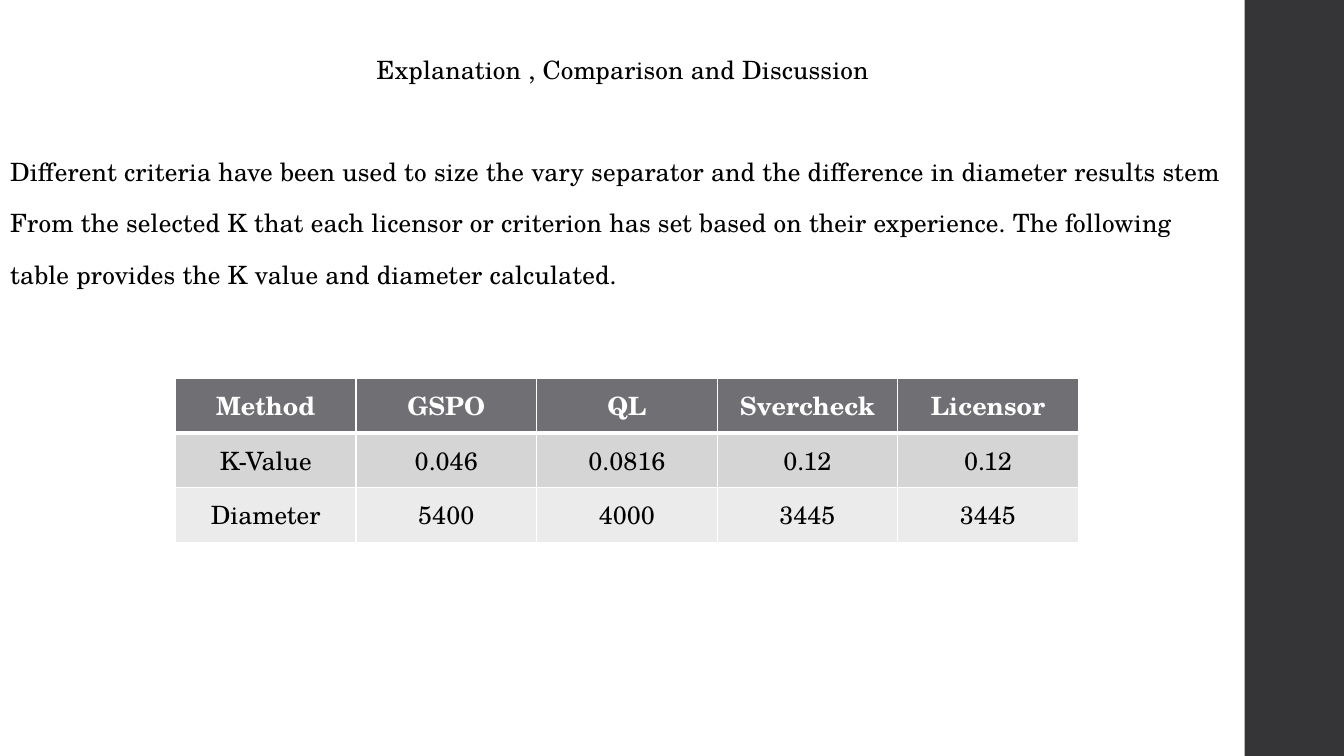
import dataclasses

import lxml.etree
import pptx
import pptx.dml.color
import pptx.enum.shapes
import pptx.enum.text
import pptx.oxml.ns
import pptx.util

Pt = pptx.util.Pt
Align = pptx.enum.text.PP_ALIGN
Anchor = pptx.enum.text.MSO_ANCHOR
FACE = "TeX Gyre Schola"
WIDTH, HEIGHT = 960, 540
TEXT_W = 890
PITCH = 36.6  # distance from one text line to the next

TITLE = "Explanation , Comparison and Discussion"
LINES = [
    "Different criteria have been used to size the vary separator and the difference in diameter results stem",
    "From the selected K that each licensor or criterion has set based on their experience. The following",
    "table provides the K value and diameter calculated.",
]
PARA = {"line_spacing": 0.95, "space_before": Pt(14), "space_after": Pt(2)}
FRAME = {
    "word_wrap": True,
    "auto_size": pptx.enum.text.MSO_AUTO_SIZE.NONE,
    "vertical_anchor": Anchor.TOP,
    "margin_left": Pt(7.2),
    "margin_right": Pt(7.2),
    "margin_top": Pt(3.6),
    "margin_bottom": Pt(3.6),
}


@dataclasses.dataclass
class Row:
    texts: list[str]
    fill: str
    ink: str = "000000"
    bold: bool = False
    top: float = 1
    base: float = 1


ROWS = [
    Row(["Method", "GSPO", "QL", "Svercheck", "Licensor"],
        "6F6F74", "FFFFFF", True, base=3),
    Row(["K-Value", "0.046", "0.0816", "0.12", "0.12"], "D5D5D6", top=3),
    Row(["Diameter", "5400", "4000", "3445", "3445"], "EBEBEB"),
]


def color(code: str) -> pptx.dml.color.RGBColor:
    return pptx.dml.color.RGBColor.from_string(code)


def apply(item, form: dict) -> None:
    for key, value in form.items():
        setattr(item, key, value)


def paint(item, code: str) -> None:
    item.fill.solid()
    item.fill.fore_color.rgb = color(code)


def write(para, text: str, align: Align, ink: str = "000000",
          bold: bool = False):
    run = para.add_run()
    run.text = text
    apply(run.font, {"name": FACE, "size": Pt(18), "bold": bold})
    run.font.color.rgb = color(ink)
    para.alignment = align
    return run


def fill_holder(holder, top: float, height: float, lines: list[str],
                align: Align) -> None:
    apply(holder, {"left": Pt(0), "top": Pt(top),
                   "width": Pt(TEXT_W), "height": Pt(height)})
    frame = holder.text_frame
    apply(frame, FRAME)
    for index, line in enumerate(lines):
        para = frame.add_paragraph() if index else frame.paragraphs[0]
        apply(para, PARA)
        run = write(para, line, align)
        run.font._element.set("spc", "10")
        props = para._p.get_or_add_pPr()
        props.set("marL", "0")
        props.set("indent", "0")
        lxml.etree.SubElement(props, pptx.oxml.ns.qn("a:buNone"))


def edge(cell, side: str, width: float) -> None:
    props = cell._tc.get_or_add_tcPr()
    line = lxml.etree.SubElement(props, pptx.oxml.ns.qn("a:ln" + side),
                                 w=str(Pt(width)))
    solid = lxml.etree.SubElement(line, pptx.oxml.ns.qn("a:solidFill"))
    lxml.etree.SubElement(solid, pptx.oxml.ns.qn("a:srgbClr"), val="FFFFFF")


def draw_table(slide, rows: list[Row]) -> None:
    count = len(rows[0].texts)
    table = slide.shapes.add_table(
        len(rows), count, Pt(125.3), Pt(270.3),
        Pt(129 * count), Pt(39 * len(rows))).table
    table.horz_banding = False
    for r, row in enumerate(rows):
        for c, text in enumerate(row.texts):
            cell = table.cell(r, c)
            widths = {"L": 1, "R": 1, "T": row.top, "B": row.base}
            for side, width in widths.items():
                edge(cell, side, width)
            paint(cell, row.fill)
            cell.vertical_anchor = Anchor.MIDDLE
            write(cell.text_frame.paragraphs[0], text, Align.CENTER,
                  row.ink, row.bold)


def main() -> None:
    deck = pptx.Presentation()
    apply(deck, {"slide_width": Pt(WIDTH), "slide_height": Pt(HEIGHT)})
    slide = deck.slides.add_slide(deck.slide_layouts[1])

    # Dark side band
    band = slide.shapes.add_shape(
        pptx.enum.shapes.MSO_SHAPE.RECTANGLE,
        Pt(889), Pt(0), Pt(WIDTH - 889), Pt(HEIGHT))
    band.shadow.inherit = False
    paint(band, "353537")
    band.line.fill.background()

    # Title and text
    title, body = slide.placeholders
    fill_holder(title, PITCH, PITCH, [TITLE], Align.CENTER)
    fill_holder(body, 3 * PITCH, 3 * PITCH, LINES, Align.LEFT)

    # Comparison of methods
    draw_table(slide, ROWS)
    deck.save("out.pptx")


if __name__ == "__main__":
    main()
